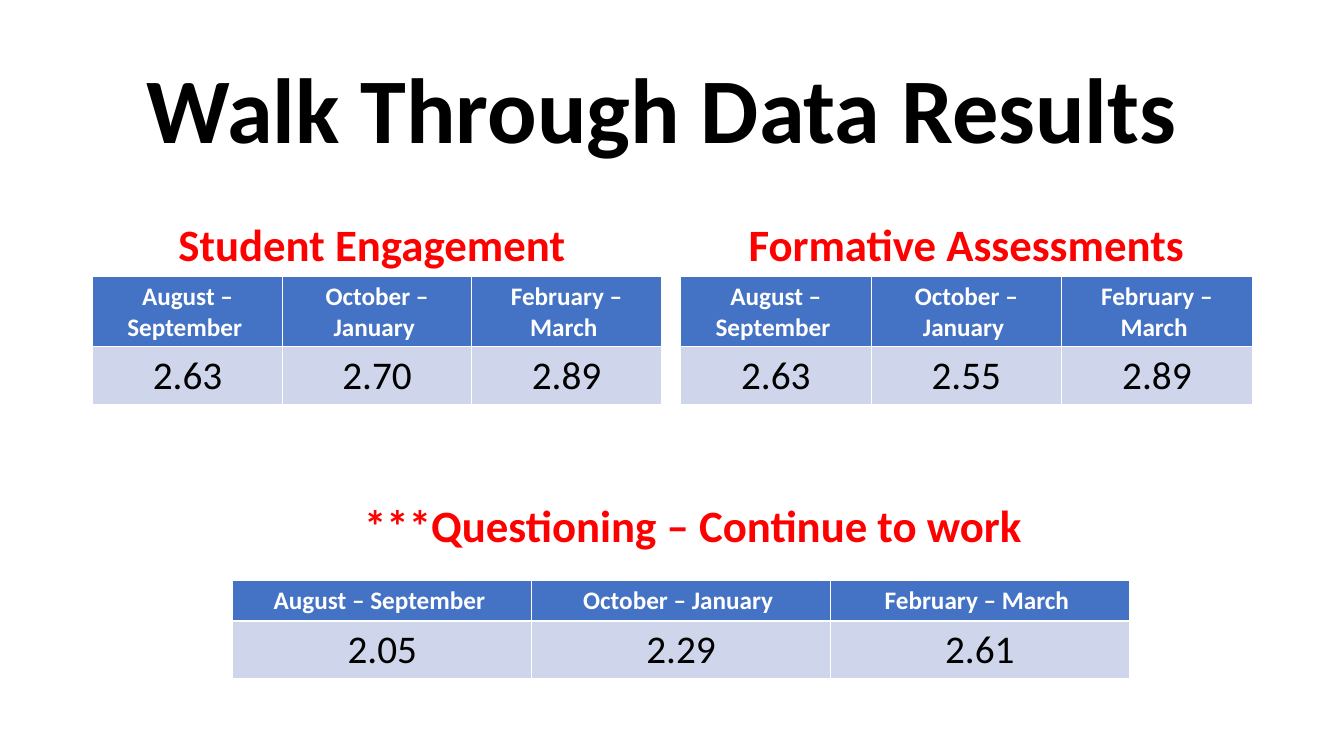
"""Build the walk through data results slide."""
from pptx import Presentation
from pptx.dml.color import RGBColor
from pptx.enum.text import MSO_ANCHOR as Anchor, MSO_AUTO_SIZE as AutoSize, PP_ALIGN as Align
from pptx.util import Emu, Pt

PIXEL = 9144
BLACK = RGBColor(0, 0, 0)
WHITE = RGBColor(255, 255, 255)
RED = RGBColor(255, 0, 0)
BLUE = RGBColor(0x44, 0x72, 0xC4)
PALE_BLUE = RGBColor(0xCF, 0xD5, 0xEA)
PERIODS = ["August – September ", "October – January ", "February – March "]


def px(*lengths):
    return [Emu(length * PIXEL) for length in lengths]


def write(frame, text, size, color, bold=True, line=None, before=None):
    para = frame.paragraphs[0]
    para.alignment = Align.CENTER
    para.line_spacing = line
    para.space_before = before
    span = para.add_run()
    span.text = text
    span.font.name = "Calibri"
    span.font.size = Pt(size)
    span.font.bold = bold
    span.font.color.rgb = color


class SlideBuilder:
    def __init__(self, deck):
        self.page = deck.slides.add_slide(deck.slide_layouts[5])

    def title(self, text, left, top, width, height):
        box = self.page.shapes.title
        box.left, box.top, box.width, box.height = px(left, top, width, height)
        frame = box.text_frame
        frame.word_wrap = True
        frame.auto_size = AutoSize.NONE
        frame.vertical_anchor = Anchor.MIDDLE
        write(frame, text, 66, BLACK, line=0.9)

    def heading(self, text, left, top, width, height, anchor=Anchor.TOP, **spacing):
        box = self.page.shapes.add_textbox(*px(left, top, width, height))
        frame = box.text_frame
        frame.word_wrap = True
        frame.vertical_anchor = anchor
        write(frame, text, 32, RED, **spacing)

    def table(self, values, left, top, width, header_height, value_height=57):
        height = header_height + value_height
        table = self.page.shapes.add_table(2, len(PERIODS), *px(left, top, width, height)).table
        table.rows[0].height, table.rows[1].height = px(header_height, value_height)
        rows = [(PERIODS, 18, WHITE, True, BLUE), (values, 28, BLACK, False, PALE_BLUE)]
        for row, (texts, size, color, bold, fill) in enumerate(rows):
            for column, text in enumerate(texts):
                cell = table.cell(row, column)
                cell.fill.solid()
                cell.fill.fore_color.rgb = fill
                write(cell.text_frame, text, size, color, bold)


def main():
    deck = Presentation()
    deck.slide_width, deck.slide_height = px(1333, 750)
    slide = SlideBuilder(deck)
    slide.title("Walk Through Data Results ", 92, 40, 1150, 145)
    comparisons = [
        ("Student Engagement ", 92, 564, ["2.63", "2.70", "2.89"]),
        ("Formative Assessments", 675, 567, ["2.63", "2.55", "2.89"]),
    ]
    for name, left, width, values in comparisons:
        slide.heading(name, left, 184, width, 90, Anchor.BOTTOM, line=0.9, before=Pt(10))
        slide.table(values, left, 274, width, 70)
    slide.heading("***Questioning – Continue to work ", 343, 489, 699, 64)
    slide.table(["2.05", "2.29", "2.61"], 231, 576, 889, 40)
    deck.save("out.pptx")


if __name__ == "__main__":
    main()
